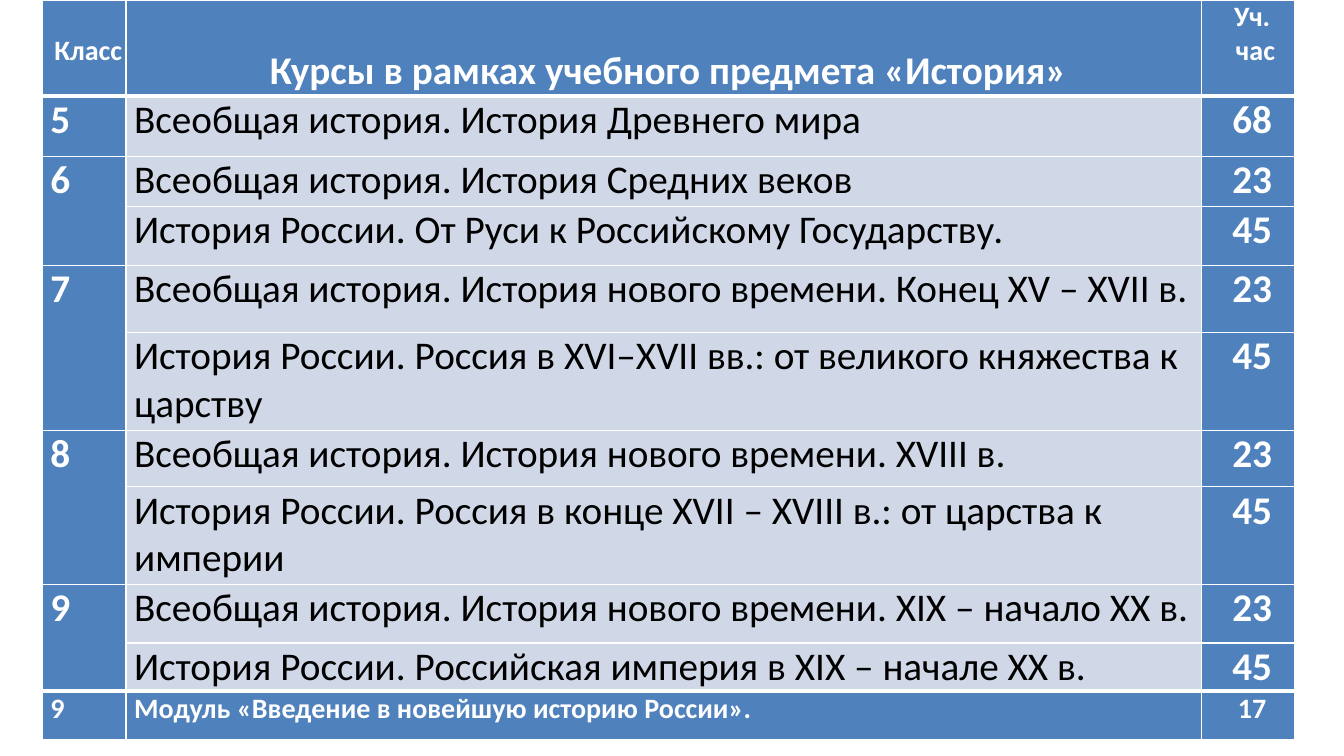
from lxml import etree
from pptx import Presentation
from pptx import util as u
from pptx.dml.color import RGBColor
from pptx.enum import text
from pptx.oxml import ns

COLORS = {"blue": "4F81BD", "pale": "D0D8E8", "white": "FFFFFF", "black": "000000"}
FONT = "Calibri"
BODY_SIZE, SMALL_SIZE = 28, 20
THIN, THICK = 1, 3
COLUMNS = [0.83, 10.67, 0.92]
ROWS = [0.95, 0.6, 0.5, 0.58, 0.67, 0.97, 0.56, 0.97, 0.58, 0.48, 0.48]

COURSES = {
    "5": [("Всеобщая история. История Древнего мира", "68")],
    "6": [("Всеобщая история. История Средних веков", "23"),
          ("История России. От Руси к Российскому Государству.", "45")],
    "7": [("Всеобщая история. История нового времени. Конец XV – XVII в.", "23"),
          ("История России. Россия в XVI–XVII вв.: от великого княжества к царству", "45")],
    "8": [("Всеобщая история. История нового времени. XVIII в.", "23"),
          ("История России. Россия в конце XVII – XVIII в.: от царства к империи", "45")],
    "9": [("Всеобщая история. История нового времени. XIX – начало ХХ в.", "23"),
          ("История России. Российская империя в XIX – начале ХХ в.", "45")],
}
MODULE = ("9", "Модуль «Введение в новейшую историю России».", "17")


def write(cell, content, size=BODY_SIZE, color="white", bold=True, centered=False, top=0):
    """Fill a cell with one paragraph per line of content, starting top inches down."""
    cell.margin_left, cell.margin_top = u.Inches(0.08), u.Inches(top)
    cell.margin_right = cell.margin_bottom = 0
    frame = cell.text_frame
    frame.text = content
    for paragraph in frame.paragraphs:
        paragraph.alignment = text.PP_ALIGN.CENTER if centered else text.PP_ALIGN.LEFT
        font = paragraph.runs[0].font
        font.name, font.size, font.bold = FONT, u.Pt(size), bold
        font.color.rgb = RGBColor.from_string(COLORS[color])


def style_cell(cell, fill, top_width, bottom_width):
    properties = cell._tc.get_or_add_tcPr()
    for side, width in zip("LRTB", (THIN, THIN, top_width, bottom_width)):
        line = etree.SubElement(properties, ns.qn(f"a:ln{side}"), w=str(u.Pt(width)))
        solid = etree.SubElement(line, ns.qn("a:solidFill"))
        etree.SubElement(solid, ns.qn("a:srgbClr"), val=COLORS["white"])
    cell.fill.solid()
    cell.fill.fore_color.rgb = RGBColor.from_string(COLORS[fill])


def style_grid(table):
    """Set sizes, fills and borders; thick lines part the header and the last row."""
    for column, width in zip(table.columns, COLUMNS):
        column.width = u.Inches(width)
    last = len(ROWS) - 1
    for row_index, height in enumerate(ROWS):
        table.rows[row_index].height = u.Inches(height)
        for column_index in range(len(COLUMNS)):
            is_course = column_index == 1 and 0 < row_index < last
            style_cell(table.cell(row_index, column_index),
                       "pale" if is_course else "blue",
                       THICK if row_index in (1, last) else THIN,
                       THICK if row_index in (0, last - 1) else THIN)


def fill_header(table):
    write(table.cell(0, 0), "Класс", size=SMALL_SIZE, centered=True, top=0.34)
    write(table.cell(0, 1), "Курсы в рамках учебного предмета «История»",
          centered=True, top=0.47)
    write(table.cell(0, 2), "Уч.\n час", size=SMALL_SIZE, centered=True)


def fill_courses(table):
    row = 1
    for grade, courses in COURSES.items():
        grade_cell = table.cell(row, 0)
        if len(courses) > 1:
            grade_cell.merge(table.cell(row + len(courses) - 1, 0))
        write(grade_cell, grade)
        for course, hours in courses:
            write(table.cell(row, 1), course, color="black", bold=False)
            write(table.cell(row, 2), hours, centered=True)
            row += 1


def fill_module(table):
    for column, content in enumerate(MODULE):
        write(table.cell(len(ROWS) - 1, column), content,
              size=SMALL_SIZE, centered=column == 2)


def add_course_table(slide, left, top):
    shape = slide.shapes.add_table(len(ROWS), len(COLUMNS), u.Inches(left), u.Inches(top),
                                   u.Inches(sum(COLUMNS)), u.Inches(sum(ROWS)))
    table = shape.table
    table.first_row = table.horz_banding = False
    style_grid(table)
    fill_header(table)
    fill_courses(table)
    fill_module(table)


def main():
    presentation = Presentation()
    presentation.slide_width, presentation.slide_height = u.Inches(13.33), u.Inches(7.5)
    slide = presentation.slides.add_slide(presentation.slide_layouts[6])
    add_course_table(slide, left=0.42, top=0)
    presentation.save("out.pptx")


if __name__ == "__main__":
    main()
